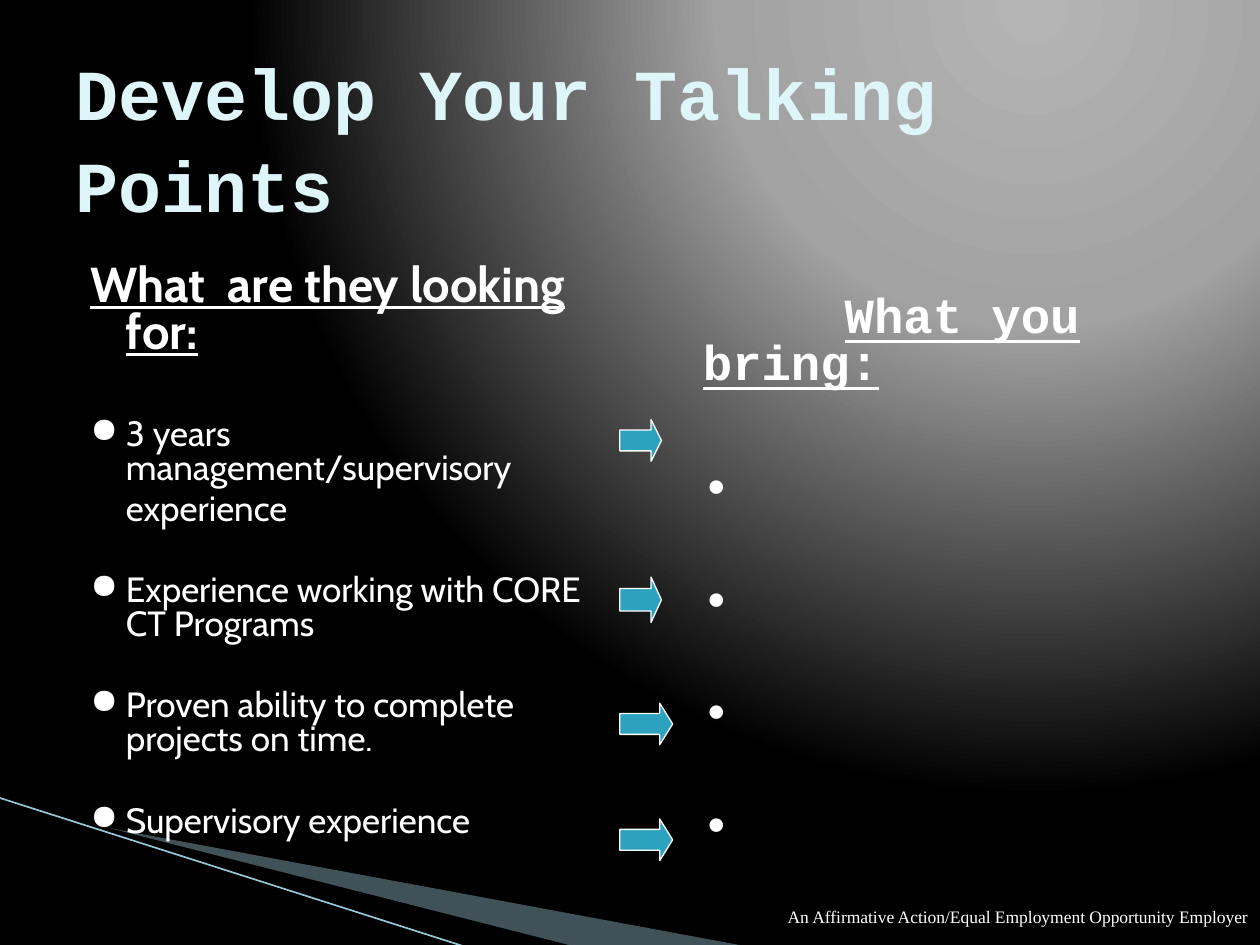
from lxml import etree
from pptx import Presentation
from pptx.dml.color import RGBColor
from pptx.enum.shapes import MSO_CONNECTOR, MSO_SHAPE
from pptx.enum.text import MSO_ANCHOR, PP_ALIGN
from pptx.oxml import parse_xml
from pptx.oxml.ns import nsdecls, qn
from pptx.util import Pt

COLORS = {
    "glow": "B4B4B4", "mid": "A2A2A2", "black": "000000", "white": "FFFFFF",
    "title": "DEF5FA", "arrow": "2DA2BF", "wedge": "A0CBDC", "ray": "97C5D8",
}


def add_box(left, top, width, height, anchor=MSO_ANCHOR.TOP):
    frame = slide.shapes.add_textbox(Pt(left), Pt(top), Pt(width), Pt(height)).text_frame
    frame.word_wrap = True
    frame.vertical_anchor = anchor
    return frame


def write(frame, text, font, size, color="white", bold=False, underline=False,
          spacing=None, before=0, margin=0, indent=0, bullet=None):
    paragraph = frame.paragraphs[0]
    if paragraph.runs:
        paragraph = frame.add_paragraph()
    paragraph.add_run().text = text
    properties = paragraph._p.get_or_add_pPr()
    properties.set("marL", str(Pt(margin)))
    properties.set("indent", str(Pt(indent)))
    if bullet:
        etree.SubElement(properties, qn("a:buChar"), char=bullet)
    paragraph.line_spacing = spacing
    paragraph.space_before = Pt(before)
    paragraph.font.name = font
    paragraph.font.size = Pt(size)
    paragraph.font.bold = bold
    paragraph.font.underline = underline
    paragraph.font.color.rgb = RGBColor.from_string(COLORS[color])
    return paragraph


deck = Presentation()
deck.slide_width, deck.slide_height = Pt(720), Pt(540)
slide = deck.slides.add_slide(deck.slide_layouts[6])

backdrop = slide.background.fill
backdrop.gradient()
gradient = slide.background._cSld.find(".//" + qn("a:gradFill"))
stops = "".join(
    f'<a:gs pos="{position}"><a:srgbClr val="{COLORS[name]}"/></a:gs>'
    for position, name in [(0, "glow"), (40000, "mid"), (100000, "black")])
gradient.getparent().replace(gradient, parse_xml(
    f'<a:gradFill {nsdecls("a")} rotWithShape="1"><a:gsLst>{stops}</a:gsLst>'
    '<a:path path="circle"><a:fillToRect l="65000" t="0" r="0" b="98000"/></a:path>'
    '</a:gradFill>'))

wedges = [
    ("wedge", 40, [(39.6, 468.7), (428.4, 540.7), (328.3, 540.7), (39.6, 468)]),
    ("black", 100, [(38.2, 467.3), (329, 540.7), (267.8, 541.4), (38.9, 468)]),
]
for color, opacity, (start, *corners) in wedges:
    builder = slide.shapes.build_freeform(*start, scale=Pt(1))
    builder.add_line_segments(corners, close=True)
    wedge = builder.convert_to_shape()
    wedge.shadow.inherit = False
    wedge.fill.solid()
    wedge.fill.fore_color.rgb = RGBColor.from_string(COLORS[color])
    wedge.line.fill.background()
    if opacity < 100:
        tint = wedge._element.spPr.find(qn("a:solidFill")).find(qn("a:srgbClr"))
        etree.SubElement(tint, qn("a:alpha"), val=str(opacity * 1000))

ray = slide.shapes.add_connector(
    MSO_CONNECTOR.STRAIGHT, Pt(-0.7), Pt(455.8), Pt(267.1), Pt(541.4))
ray.line.color.rgb = RGBColor.from_string(COLORS["ray"])
ray.line.width = Pt(0.95)
etree.SubElement(ray._element.spPr, qn("a:effectLst"))

wanted = add_box(36, 147.6, 318.2, 356.4)
write(wanted, "What  are they looking for:", "Cabin", 28, bold=True, underline=True,
      spacing=0.8, margin=28.8, indent=-20.2)
requirements = [
    ("3 years management/supervisory", 35, "●"),
    ("experience", 4, None),
    ("Experience working with CORE CT Programs", 27.4, "●"),
    ("Proven ability to complete projects on time.", 27.4, "●"),
    ("Supervisory experience", 27.4, "●"),
]
for text, before, bullet in requirements:
    write(wanted, text, "Cabin", 20, spacing=0.8, before=before, margin=28.8,
          indent=-20.2 if bullet else 0, bullet=bullet)

offered = add_box(365.8, 165.6, 318.2, 356.4)
write(offered, "What you bring:", "Courier New", 28, bold=True, underline=True,
      spacing=0.8, margin=28.8, indent=81)
for _ in range(4):
    write(offered, "●", "Times New Roman", 18, bold=True, spacing=0.8, before=47, margin=31)

title = add_box(36, 21.6, 648, 90)
write(title, "Develop Your Talking Points", "Courier New", 41, color="title", bold=True,
      spacing=1.06)

arrows = [(239.8, 23.8, 23.8, 0.25), (329.8, 23.8, 25.9, 0.25),
          (401.8, 30.2, 23.8, 0.31), (468, 30.2, 23.8, 0.31)]
for top, width, height, head in arrows:
    arrow = slide.shapes.add_shape(
        MSO_SHAPE.RIGHT_ARROW, Pt(354.2), Pt(top), Pt(width), Pt(height))
    arrow.adjustments[0], arrow.adjustments[1] = 0.5, head
    arrow.shadow.inherit = False
    arrow.fill.solid()
    arrow.fill.fore_color.rgb = RGBColor.from_string(COLORS["arrow"])
    arrow.line.color.rgb = RGBColor.from_string(COLORS["white"])
    arrow.line.width = Pt(0.75)

footer = add_box(344.9, 504.7, 375.1, 28.8, MSO_ANCHOR.BOTTOM)
write(footer, "An Affirmative Action/Equal Employment Opportunity Employer",
      "Times New Roman", 10).alignment = PP_ALIGN.RIGHT

deck.save("out.pptx")
